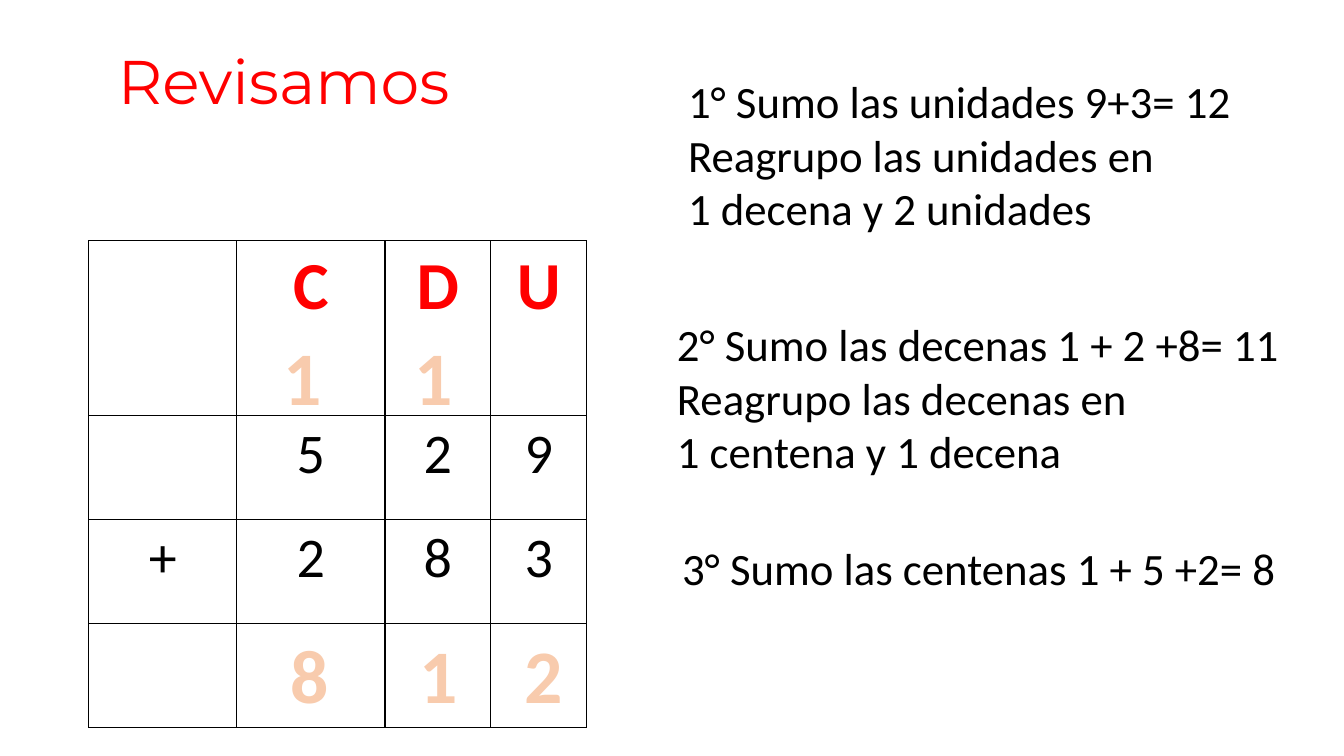
from lxml import etree
from pptx import Presentation
from pptx import util as u
from pptx.dml.color import RGBColor
from pptx.enum import text
from pptx.oxml import parse_xml
from pptx.oxml.ns import nsdecls

HUES = {"ink": "000000", "red": "FF0000", "peach": "F8CBAD", "edge": "ED7D31"}


def line(tag, hue, width):
    return parse_xml(
        f'<a:{tag} {nsdecls("a")} w="{u.Pt(width)}"><a:solidFill>'
        f'<a:srgbClr val="{HUES[hue]}"/></a:solidFill></a:{tag}>')


class Board:
    """Draws the elements of a column addition on one slide."""

    def __init__(self, slide, font="Calibri"):
        self.slide = slide
        self.font = font

    def style(self, frame, size, hue, bold=False, font=None, align=None):
        for para in frame.paragraphs:
            para.alignment = align
            for run in para.runs:
                run.font.size = u.Pt(size)
                run.font.name = font or self.font
                run.font.bold = bold
                run.font.color.rgb = RGBColor.from_string(HUES[hue])

    def box(self, words, place, wrap=False):
        frame = self.slide.shapes.add_textbox(*map(u.Cm, place)).text_frame
        frame.text = words
        frame.word_wrap = wrap
        frame.auto_size = text.MSO_AUTO_SIZE.SHAPE_TO_FIT_TEXT
        return frame

    def title(self, words, place):
        frame = self.box(words, place, True)
        frame.auto_size = text.MSO_AUTO_SIZE.NONE
        frame.vertical_anchor = text.MSO_ANCHOR.MIDDLE
        frame.paragraphs[0].line_spacing = 0.9
        self.style(frame, 44, "red", font="Montserrat")

    def step(self, lines, place, wrap=False):
        frame = self.box("\n".join(lines), place, wrap)
        self.style(frame, 32, "ink")

    def digit(self, mark, left, top, width=1.93):
        frame = self.box(mark, (left, top, width, 2.57))
        self.style(frame, 54, "peach", True, align=text.PP_ALIGN.CENTER)
        font = frame.paragraphs[0].runs[0].font
        font.fill.solid()
        font.color.rgb = RGBColor.from_string(HUES["peach"])
        frame.paragraphs[0].runs[0]._r.get_or_add_rPr().insert(
            0, line("ln", "edge", 1.75))

    def cell(self, cell, mark, head):
        cell.text = mark
        cell.fill.background()
        size, hue = (48, "red") if head else (40, "ink")
        self.style(cell.text_frame, size, hue, head, align=text.PP_ALIGN.CENTER)
        props = cell._tc.get_or_add_tcPr()
        for spot, tag in enumerate(("lnL", "lnR", "lnT", "lnB")):
            props.insert(spot, line(tag, "ink", 1))

    def grid(self, rows, left, top, wide, high):
        table = self.slide.shapes.add_table(
            len(rows), len(wide), u.Cm(left), u.Cm(top),
            u.Cm(sum(wide)), u.Cm(sum(high))).table
        table.first_row = table.horz_banding = False
        for col, size in zip(table.columns, wide):
            col.width = u.Cm(size)
        for y, (row, size) in enumerate(zip(rows, high)):
            table.rows[y].height = u.Cm(size)
            for x, mark in enumerate(row):
                self.cell(table.cell(y, x), mark, y == 0)


def main():
    deck = Presentation()
    deck.slide_width, deck.slide_height = u.Cm(33.87), u.Cm(19.05)
    board = Board(deck.slides.add_slide(deck.slide_layouts[6]))

    rows = [("", "C", "D", "U"), ("", "5", "2", "9"),
            ("+", "2", "8", "3"), ("", "", "", "")]
    board.grid(rows, 2.24, 6.07, (3.73, 3.73, 2.67, 2.41),
               (4.4, 2.62, 2.62, 2.62))
    board.title("Revisamos", (2.72, 0.3, 29.21, 3.68))

    board.step(("1° Sumo las unidades 9+3= 12", "Reagrupo las unidades en",
                "1 decena y 2 unidades"), (17.09, 1.73, 14.71, 4.37), True)
    board.step(("2° Sumo las decenas 1 + 2 +8= 11", "Reagrupo las decenas en",
                "1 centena y 1 decena"), (16.81, 7.85, 15.85, 4.37))
    board.step(("3° Sumo las centenas 1 + 5 +2= 8",),
               (16.94, 13.51, 15.65, 1.63))

    carry, total = 8.18, 15.7
    board.digit("2", 12.95, total, 1.5)
    for mark, left, top in (("1 ", 10.19, carry), ("1 ", 6.88, carry),
                            ("1 ", 10.31, total), ("8 ", 7.06, total)):
        board.digit(mark, left, top)
    deck.save("out.pptx")


if __name__ == "__main__":
    main()
